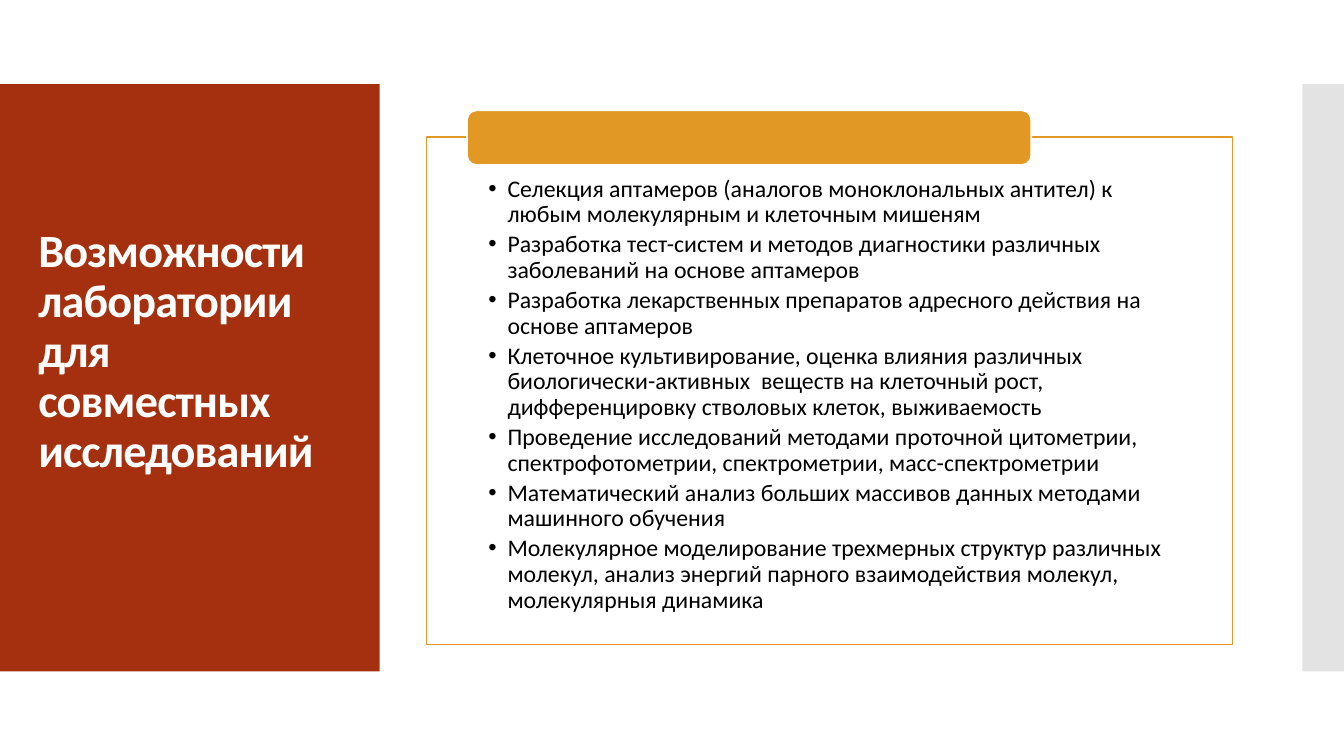
from lxml.etree import SubElement
from pptx import Presentation
from pptx.dml.color import RGBColor
from pptx.enum.shapes import MSO_SHAPE
from pptx.enum.text import MSO_ANCHOR, MSO_AUTO_SIZE, PP_ALIGN
from pptx.oxml.ns import qn
from pptx.util import Cm, Pt

COLORS = {"red": "A5300F", "gold": "E19825", "gray": "E3E3E3",
          "white": "FFFFFF", "black": "000000"}
TITLE = "Возможности лаборатории для совместных исследований"
ITEMS = [
    "Селекция аптамеров (аналогов моноклональных антител) к любым молекулярным и клеточным мишеням",
    "Разработка тест-систем и методов диагностики различных заболеваний на основе аптамеров",
    "Разработка лекарственных препаратов адресного действия на основе аптамеров",
    "Клеточное культивирование, оценка влияния различных биологически-активных  веществ на клеточный рост, "
    "дифференцировку стволовых клеток, выживаемость",
    "Проведение исследований методами проточной цитометрии, спектрофотометрии, спектрометрии, масс-спектрометрии",
    "Математический анализ больших массивов данных методами машинного обучения",
    "Молекулярное моделирование трехмерных структур различных молекул, анализ энергий парного "
    "взаимодействия молекул, молекулярныя динамика",
]


def color(name):
    return RGBColor.from_string(COLORS[name])


def place(shape, left, top, width, height):
    shape.left, shape.top = Cm(left), Cm(top)
    shape.width, shape.height = Cm(width), Cm(height)


deck = Presentation()
deck.slide_width, deck.slide_height = Cm(33.87), Cm(19.05)
slide = deck.slides.add_slide(deck.slide_layouts[1])
title, body = slide.placeholders

# Side panels behind the text, gold tab above it
for kind, left, top, width, height, fill in [
    (MSO_SHAPE.RECTANGLE, 0, 2.12, 9.57, 14.8, "red"),
    (MSO_SHAPE.RECTANGLE, 32.82, 2.12, 1.05, 14.8, "gray"),
    (MSO_SHAPE.ROUNDED_RECTANGLE, 11.77, 2.78, 14.22, 1.38, "gold"),
]:
    shape = slide.shapes.add_shape(kind, Cm(left), Cm(top), Cm(width), Cm(height))
    shape.shadow.inherit = False
    shape.fill.solid()
    shape.fill.fore_color.rgb = color(fill)
    if fill == "gold":
        shape.line.color.rgb = color("white")
        shape.line.width = Pt(1.35)
    else:
        shape.line.fill.background()
        title._element.addprevious(shape._element)

# Title
place(title, 0.71, 2.5, 8.18, 12.78)
frame = title.text_frame
frame.text = TITLE
frame.word_wrap = True
frame.auto_size = MSO_AUTO_SIZE.NONE
frame.vertical_anchor = MSO_ANCHOR.MIDDLE
head = frame.paragraphs[0]
head.alignment = PP_ALIGN.LEFT
head.line_spacing = 0.9
head.space_after = Pt(6)
head.font.name, head.font.size, head.font.bold = "Calibri", Pt(33), True
head.font.color.rgb = color("white")
head.runs[0]._r.get_or_add_rPr().set("spc", "-60")

# Framed list
place(body, 10.74, 3.45, 20.32, 12.8)
body.fill.solid()
body.fill.fore_color.rgb = color("white")
body.line.color.rgb = color("gold")
body.line.width = Pt(0.85)
frame = body.text_frame
frame.text = "\n".join(ITEMS)
frame.word_wrap = True
frame.auto_size = MSO_AUTO_SIZE.NONE
frame.vertical_anchor = MSO_ANCHOR.TOP
frame.margin_left = frame.margin_right = Cm(1.57)
frame.margin_top, frame.margin_bottom = Cm(1), Cm(0.33)
for item in frame.paragraphs:
    props = item._p.get_or_add_pPr()
    props.set("marL", str(Cm(0.48)))
    props.set("indent", str(-Cm(0.48)))
    SubElement(props, qn("a:buChar")).set("char", "•")
    item.alignment = PP_ALIGN.LEFT
    item.line_spacing = 0.9
    item.space_before, item.space_after = Pt(0), Pt(3)
    item.font.name, item.font.size = "Calibri", Pt(17)
    item.font.color.rgb = color("black")

deck.save("out.pptx")
